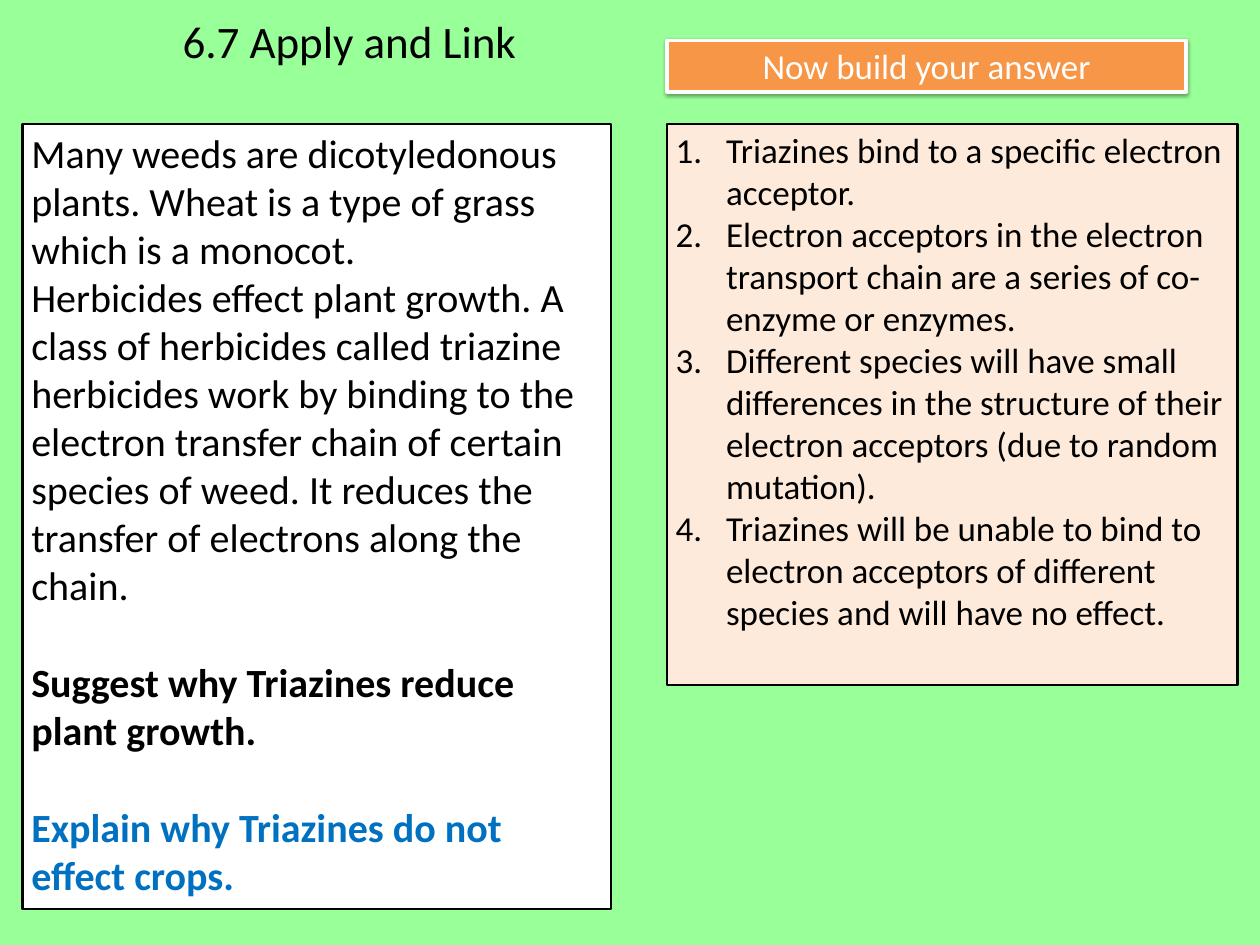
import pptx
import pptx.util
import pptx.dml.color
import pptx.enum.shapes
import pptx.enum.text
import pptx.oxml
import pptx.oxml.ns

Inches = pptx.util.Inches
Pt = pptx.util.Pt
Align = pptx.enum.text.PP_ALIGN

HUES = {
    "back": "99FF99",
    "ink": "000000",
    "paper": "FFFFFF",
    "blue": "0070C0",
    "orange": "F79646",
    "peach": "FDEADA",
}
TASK = [
    ("Many weeds are dicotyledonous plants. Wheat is a type of grass which is a monocot.", {}),
    ("Herbicides effect plant growth. A class of herbicides called triazine herbicides "
     "work by binding to the electron transfer chain of certain species of weed. "
     "It reduces the transfer of electrons along the chain.", {}),
    ("Suggest why Triazines reduce plant growth.", {"bold": True, "gap": 39}),
    ("Explain why Triazines do not effect crops.", {"bold": True, "gap": 39, "hue": "blue"}),
]
STEPS = [
    "Triazines bind to a specific electron acceptor.",
    "Electron acceptors in the electron transport chain are a series of co-enzyme or enzymes.",
    "Different species will have small differences in the structure of their "
    "electron acceptors (due to random mutation).",
    "Triazines will be unable to bind to electron acceptors of different species "
    "and will have no effect.",
]


def tint(name):
    return pptx.dml.color.RGBColor.from_string(HUES[name])


def apply(item, values):
    for key, value in values.items():
        setattr(item, key, value)


def panel(slide, box, fill, line, width):
    kind = pptx.enum.shapes.MSO_SHAPE.RECTANGLE
    shape = slide.shapes.add_shape(kind, *map(Inches, box))
    shape.shadow.inherit = False
    shape.fill.solid()
    shape.fill.fore_color.rgb = tint(fill)
    shape.line.color.rgb = tint(line)
    shape.line.width = Pt(width)
    return shape


def number(para):
    props = para._p.get_or_add_pPr()
    indent = Inches(0.56)
    props.set("marL", str(indent))
    props.set("indent", str(-indent))
    mark = pptx.oxml.ns.nsdecls("a")
    for tag in ('buFont %s typeface="+mj-lt"', 'buAutoNum %s type="arabicPeriod"'):
        props.append(pptx.oxml.parse_xml("<a:" + tag % mark + "/>"))


def write(shape, lines, size, align=Align.LEFT, listed=False):
    frame = shape.text_frame
    apply(frame, {"word_wrap": True, "vertical_anchor": pptx.enum.text.MSO_ANCHOR.TOP})
    for index, (text, style) in enumerate(lines):
        para = frame.add_paragraph() if index else frame.paragraphs[0]
        para.text = text
        if listed:
            number(para)
        apply(para, {"alignment": align, "space_before": Pt(style.get("gap", 0))})
        apply(para.font, {"name": "Calibri", "size": Pt(size), "bold": style.get("bold", False)})
        para.font.color.rgb = tint(style.get("hue", "ink"))


def title(slide, box):
    shape = slide.shapes.add_textbox(*map(Inches, box))
    write(shape, [("6.7 Apply and Link", {})], 36)


def task(slide, box):
    write(panel(slide, box, "paper", "ink", 2), TASK, 32)


def banner(slide, box):
    shape = panel(slide, box, "orange", "paper", 3)
    effects = shape._element.spPr.find(pptx.oxml.ns.qn("a:effectLst"))
    effects.append(pptx.oxml.parse_xml(
        f'<a:outerShdw {pptx.oxml.ns.nsdecls("a")} blurRad="{Pt(3.1)}" dist="{Pt(1.6)}" '
        f'dir="5400000" rotWithShape="0"><a:srgbClr val="{HUES["ink"]}">'
        '<a:alpha val="38000"/></a:srgbClr></a:outerShdw>'))
    write(shape, [("Now build your answer", {"hue": "paper"})], 28, Align.CENTER)


def answer(slide, box):
    shape = panel(slide, box, "peach", "ink", 2)
    write(shape, [(step, {}) for step in STEPS], 28, listed=True)


def main():
    deck = pptx.Presentation()
    apply(deck, {"slide_width": Inches(14), "slide_height": Inches(10.5)})
    slide = deck.slides.add_slide(deck.slide_layouts[6])
    slide.background.fill.solid()
    slide.background.fill.fore_color.rgb = tint("back")
    top, right = 1.38, 7.41
    task(slide, (0.25, top, 6.54, 8.72))
    banner(slide, (right, 0.45, 5.77, 0.57))
    answer(slide, (right, top, 6.34, 6.23))
    title(slide, (1.93, 0.1, 4.86, 0.71))
    deck.save("out.pptx")


if __name__ == "__main__":
    main()
